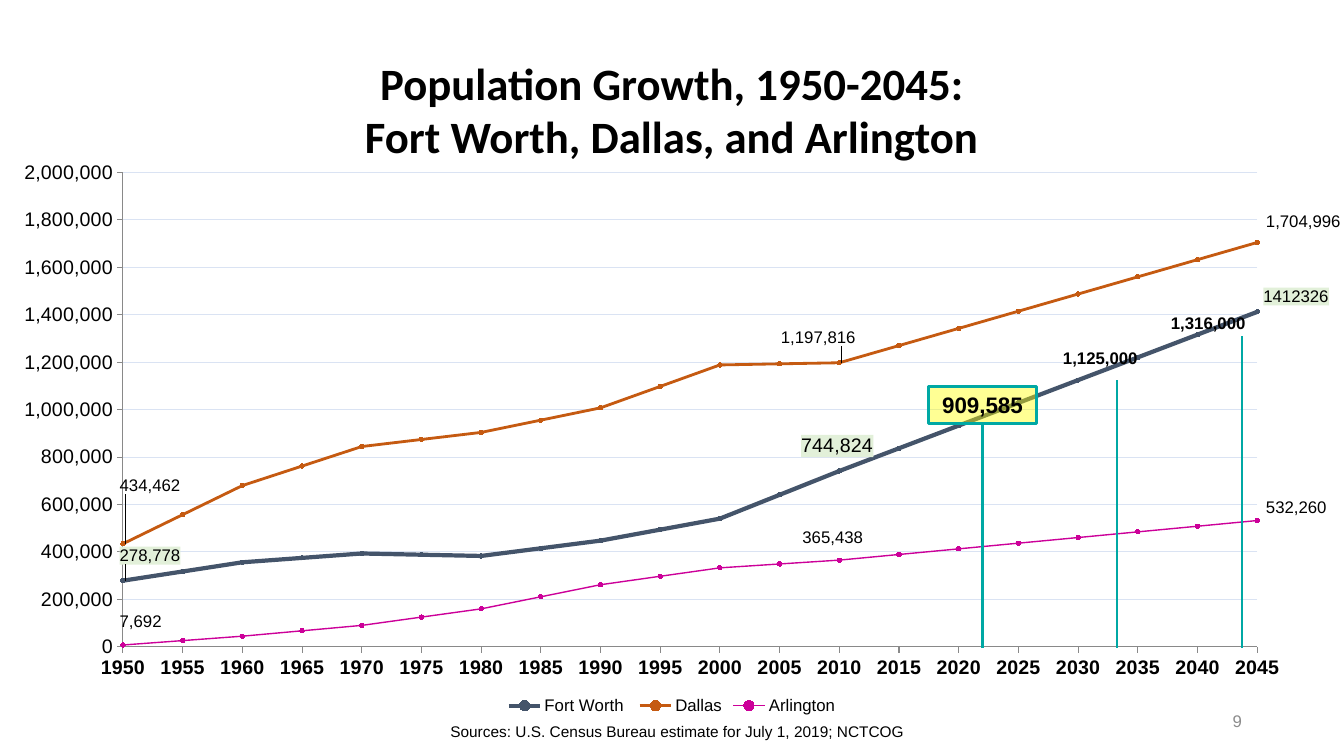
from dataclasses import dataclass

from lxml import etree
from pptx import Presentation
from pptx import util as u
from pptx.chart import data as chart_data
from pptx.dml.color import RGBColor
from pptx.enum import chart as charts, shapes, text
from pptx.oxml import ns, parse_xml


@dataclass(frozen=True)
class Theme:
    heading: str = "Calibri"
    body: str = "Arial"
    black: str = "000000"
    muted: str = "8C8C8C"
    axis: str = "898989"
    grid: str = "DAE3F3"
    teal: str = "00A8A4"
    yellow: str = "FFFF00"
    label_fill: str = "E2F0D9"
    title_size: int = 32
    callout_size: int = 16
    axis_size: int = 14
    label_size: int = 12
    source_size: int = 11


THEME = Theme()
FLOOR = 16.32  # height of the zero line on the page, in cm
FIRST, LAST, STEP = 1950, 2045, 5
YEARS = list(range(FIRST, LAST + 1, STEP))
KNOWN_YEARS = [1950, 1960, 1970, 1980, 1990, 2000, 2010, 2045]

# City: colour, line width, population in the known years
CITIES = {
    "Fort Worth ": ("44546A", 3, [278778, 356268, 393455, 383166, 447619, 540391, 741206, 1412326]),
    "Dallas": ("C55A11", 2, [434462, 679684, 844401, 904078, 1007618, 1188580, 1197816, 1704996]),
    "Arlington": ("CC0099", 1, [7692, 44775, 90229, 160113, 261717, 332969, 365438, 532260]),
}
# City, year, offset as a share of the chart, and options
LABELS = [
    ("Fort Worth ", 1950, -0.007, -0.044, {"filled": True}),
    ("Fort Worth ", 2010, -0.033, -0.044,
     {"filled": True, "bold": True, "size": THEME.axis_size, "words": "744,824"}),
    ("Fort Worth ", 2045, 0, -0.027, {"filled": True, "bold": True, "words": "1412326"}),
    ("Dallas", 1950, -0.007, -0.102, {}),
    ("Dallas", 2010, -0.048, -0.044, {}),
    ("Dallas", 2045, 0.002, -0.037, {}),
    ("Arlington", 1950, -0.007, -0.041, {}),
    ("Arlington", 2010, -0.032, -0.039, {}),
    ("Arlington", 2045, 0.002, -0.023, {}),
]


def rgb(value):
    return RGBColor.from_string(value)


def style_font(font, size, bold=False, color=THEME.black, name=THEME.body):
    font.name, font.size, font.bold = name, u.Pt(size), bold
    font.color.rgb = rgb(color)


def style_line(line, color, width):
    line.color.rgb = rgb(color)
    line.width = u.Pt(width)


def write(frame, lines, size, align=text.PP_ALIGN.LEFT, **font):
    frame.word_wrap = True
    for number, words in enumerate(lines):
        para = frame.add_paragraph() if number else frame.paragraphs[0]
        para.text = words
        para.alignment = align
        style_font(para.font, size, **font)


def add_text(page, place, lines, size, align=text.PP_ALIGN.LEFT, **font):
    box = page.shapes.add_textbox(*map(u.Cm, place))
    write(box.text_frame, lines, size, align, **font)
    return box


def add_marker_line(page, x, top):
    line = page.shapes.add_connector(
        shapes.MSO_CONNECTOR.STRAIGHT, u.Cm(x), u.Cm(FLOOR), u.Cm(x), u.Cm(top))
    style_line(line.line, THEME.teal, 1.5)
    etree.SubElement(line._element.spPr, ns.qn("a:effectLst"))
    return line


def add_callout(page, place, words):
    box = page.shapes.add_shape(shapes.MSO_SHAPE.RECTANGLE, *map(u.Cm, place))
    box.shadow.inherit = False
    box.fill.solid()
    box.fill.fore_color.rgb = rgb(THEME.yellow)
    tint = box._element.spPr.find(".//" + ns.qn("a:srgbClr"))
    etree.SubElement(tint, ns.qn("a:alpha"), val="42000")
    style_line(box.line, THEME.teal, 2.25)
    write(box.text_frame, [words], THEME.callout_size, text.PP_ALIGN.CENTER, bold=True)
    return box


def interpolate(known):
    """Fill the years between the known ones along straight lines."""
    values = []
    for year in YEARS:
        i = max(n for n, start in enumerate(KNOWN_YEARS[:-1]) if start <= year)
        share = (year - KNOWN_YEARS[i]) / (KNOWN_YEARS[i + 1] - KNOWN_YEARS[i])
        values.append(round(known[i] + share * (known[i + 1] - known[i])))
    return values


def manual_layout(**settings):
    parts = "".join(f'<c:{key} val="{value}"/>' for key, value in settings.items())
    return parse_xml(f'<c:layout {ns.nsdecls("c")}><c:manualLayout>{parts}'
                     "</c:manualLayout></c:layout>")


def label_point(series, year, dx, dy, words=None, size=THEME.label_size,
                bold=False, filled=False):
    index = YEARS.index(year)
    label = series.points[index].data_label
    if words:
        para = label.text_frame.paragraphs[0]
        para.text = words
        style_font(para.font, size, bold)
    else:
        style_font(label.font, size, bold)
    label.position = charts.XL_LABEL_POSITION.RIGHT
    element = next(item for item in series._element.iter(ns.qn("c:dLbl"))
                   if item.find(ns.qn("c:idx")).get("val") == str(index))
    element.find(ns.qn("c:idx")).addnext(manual_layout(x=dx, y=dy))
    if filled:
        follower = element.find(ns.qn("c:txPr"))
        if follower is None:
            follower = element.find(ns.qn("c:dLblPos"))
        follower.addprevious(parse_xml(
            f'<c:spPr {ns.nsdecls("c", "a")}><a:solidFill>'
            f'<a:srgbClr val="{THEME.label_fill}"/></a:solidFill></c:spPr>'))


def style_axes(chart):
    for axis, bold in ((chart.category_axis, True), (chart.value_axis, False)):
        style_font(axis.tick_labels.font, THEME.axis_size, bold)
        style_line(axis.format.line, THEME.axis, 0.75)
        axis.major_tick_mark = charts.XL_TICK_MARK.OUTSIDE
    chart.category_axis.has_major_gridlines = False
    scale = chart.value_axis
    scale.minimum_scale, scale.maximum_scale, scale.major_unit = 0, 2000000, 200000
    scale.tick_labels.number_format = "#,##0"
    scale.tick_labels.number_format_is_linked = False
    style_line(scale.major_gridlines.format.line, THEME.grid, 0.75)
    # The first year sits on the value axis
    cross = scale._element.find(ns.qn("c:crossBetween"))
    if cross is None:
        cross = parse_xml(f'<c:crossBetween {ns.nsdecls("c")}/>')
        scale._element.find(ns.qn("c:crosses")).addnext(cross)
    cross.set("val", "midCat")


def add_population_chart(page, place):
    data = chart_data.CategoryChartData(number_format="#,##0")
    data.categories = [str(year) for year in YEARS]
    for city, (_, _, known) in CITIES.items():
        data.add_series(city, interpolate(known))
    chart = page.shapes.add_chart(
        charts.XL_CHART_TYPE.LINE_MARKERS, *map(u.Cm, place), data).chart
    style_font(chart.font, THEME.label_size)
    chart.has_title = False
    chart.has_legend = True
    chart.legend.position = charts.XL_LEGEND_POSITION.BOTTOM
    chart.legend.include_in_layout = False
    style_axes(chart)

    # Lines and their labels
    plot = chart.plots[0]
    plot.vary_by_categories = False
    for series in plot.series:
        color, width, _ = CITIES[series.name]
        series.smooth = False
        style_line(series.format.line, color, width)
        series.marker.style = charts.XL_MARKER_STYLE.CIRCLE
        series.marker.size = 3
        series.marker.format.fill.solid()
        series.marker.format.fill.fore_color.rgb = rgb(color)
        series.marker.format.line.fill.background()
        series.data_labels.show_value = False
        for city, year, dx, dy, options in LABELS:
            if city == series.name:
                label_point(series, year, dx, dy, **options)

    # Inner plot area
    area = chart._chartSpace.find(".//" + ns.qn("c:plotArea"))
    for layout in area.findall(ns.qn("c:layout")):
        area.remove(layout)
    area.insert(0, manual_layout(layoutTarget="inner", xMode="edge", yMode="edge",
                                 x=0.0915, y=0.041, w=0.844, h=0.833))


def main():
    deck = Presentation()
    deck.slide_width, deck.slide_height = u.Cm(33.87), u.Cm(19.05)
    page = deck.slides.add_slide(deck.slide_layouts[6])
    center = text.PP_ALIGN.CENTER

    # Title and source
    add_text(page, (0, 1.27, 33.87, 3),
             ["Population Growth, 1950-2045:", "Fort Worth, Dallas, and Arlington"],
             THEME.title_size, center, bold=True, name=THEME.heading)
    add_text(page, (11.1, 18.06, 17.83, 0.74),
             ["Sources: U.S. Census Bureau estimate for July 1, 2019; NCTCOG"], THEME.source_size)

    # Chart with marked years
    add_population_chart(page, (0, 3.76, 33.87, 14.35))
    callout = add_callout(page, (23.39, 9.73, 2.74, 0.94), "909,585")
    add_marker_line(page, 24.76, 10.67).end_connect(callout, 2)
    add_marker_line(page, 28.14, 9.58)
    add_marker_line(page, 31.29, 8.46)
    for left, top, words in ((26.19, 8.64, "1,125,000"), (28.91, 7.75, "1,316,000")):
        add_text(page, (left, top, 3.08, 0.76), [words], THEME.label_size, center, bold=True)

    # Page number
    number = add_text(page, (23.93, 17.65, 7.62, 1.02), ["9"], THEME.label_size,
                      text.PP_ALIGN.RIGHT, color=THEME.muted)
    number.text_frame.vertical_anchor = text.MSO_ANCHOR.MIDDLE
    deck.save("out.pptx")


if __name__ == "__main__":
    main()
